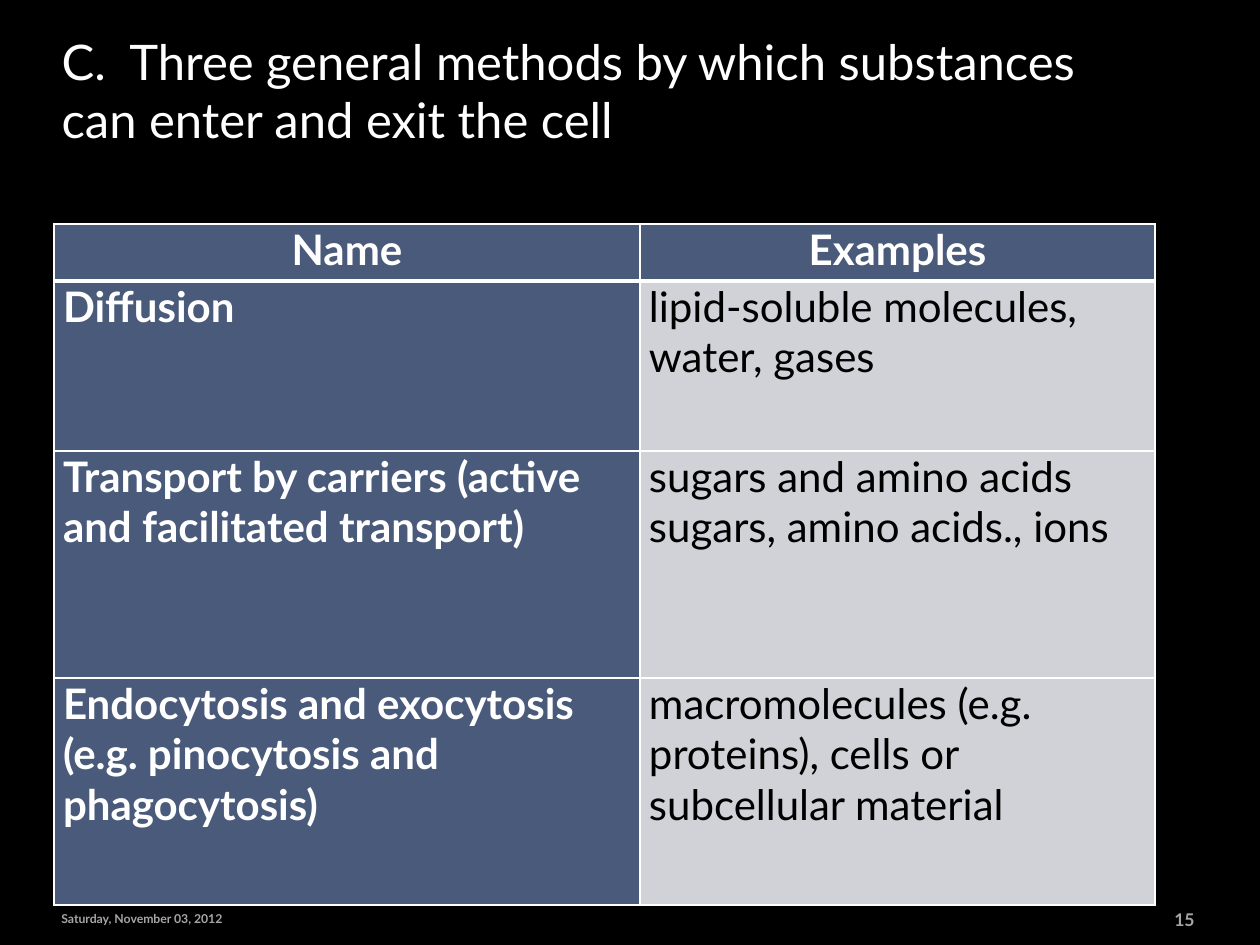
from pptx import Presentation
from pptx.dml.color import RGBColor
from pptx.enum.text import MSO_ANCHOR as Anchor, MSO_AUTO_SIZE as AutoSize, PP_ALIGN as Align
from pptx.oxml import parse_xml
from pptx.oxml.ns import nsdecls
from pptx.util import Pt

HEADING = "C.  Three general methods by which substances can enter and exit the cell"
METHODS = [
    ("Name", "Examples"),
    ("Diffusion", "lipid-soluble molecules, water, gases"),
    ("Transport by carriers (active and facilitated transport)",
     "sugars and amino acids\nsugars, amino acids., ions"),
    ("Endocytosis and exocytosis (e.g. pinocytosis and phagocytosis)",
     "macromolecules (e.g. proteins), cells or subcellular material"),
]
FOOTERS = [
    ("Saturday, November 03, 2012", (49, 902, 202, 34), 7, Align.LEFT),
    ("15", (1086, 902, 121, 34), 10, Align.RIGHT),
]
COLUMN_WIDTHS = [586, 515]
ROW_HEIGHTS = [57, 170, 227, 227]

FONT = "Lato"
BLACK = RGBColor(0x00, 0x00, 0x00)
WHITE = RGBColor(0xFF, 0xFF, 0xFF)
GRAY = RGBColor(0xA6, 0xA6, 0xA6)
NAVY = RGBColor(0x4A, 0x5A, 0x7A)
SILVER = RGBColor(0xD0, 0xD2, 0xD7)


def px(length):
    return round(length * 914400 / 126)


def style(frame, size, color, bold=False, align=Align.LEFT):
    for paragraph in frame.paragraphs:
        paragraph.alignment = align
        font = paragraph.font
        font.name, font.size, font.bold = FONT, Pt(size), bold
        font.color.rgb = color


def add_borders(cell, row):
    widths = {"L": 1, "R": 1, "T": 3 if row == 1 else 1, "B": 3 if row == 0 else 1}
    properties = cell._tc.get_or_add_tcPr()
    for position, (side, width) in enumerate(widths.items()):
        properties.insert(position, parse_xml(
            f'<a:ln{side} {nsdecls("a")} w="{Pt(width)}"><a:solidFill>'
            f'<a:srgbClr val="{WHITE}"/></a:solidFill></a:ln{side}>'))


def add_heading(slide):
    title = slide.shapes.title
    title.left, title.top, title.width, title.height = map(px, (49, 31, 1058, 147))
    frame = title.text_frame
    frame.text = HEADING
    frame.word_wrap = True
    frame.auto_size = AutoSize.NONE
    frame.vertical_anchor = Anchor.TOP
    frame.margin_top = frame.margin_bottom = 0
    style(frame, 28, WHITE)


def add_methods(slide):
    table = slide.shapes.add_table(
        len(ROW_HEIGHTS), len(COLUMN_WIDTHS), px(54), px(224),
        px(sum(COLUMN_WIDTHS)), px(sum(ROW_HEIGHTS))).table
    for column, width in zip(table.columns, COLUMN_WIDTHS):
        column.width = px(width)
    for row, (method, height) in enumerate(zip(METHODS, ROW_HEIGHTS)):
        table.rows[row].height = px(height)
        for column, wording in enumerate(method):
            cell = table.cell(row, column)
            cell.text = wording
            cell.margin_left = cell.margin_right = px(9)
            cell.margin_top = cell.margin_bottom = 0
            labelled = row == 0 or column == 0
            cell.fill.solid()
            cell.fill.fore_color.rgb = NAVY if labelled else SILVER
            style(cell.text_frame, 24, WHITE if labelled else BLACK, labelled,
                  Align.CENTER if row == 0 else Align.LEFT)
            add_borders(cell, row)


def add_footers(slide):
    for wording, place, size, align in FOOTERS:
        frame = slide.shapes.add_textbox(*map(px, place)).text_frame
        frame.text = wording
        frame.word_wrap = True
        frame.vertical_anchor = Anchor.MIDDLE
        style(frame, size, GRAY, True, align)


def main():
    deck = Presentation()
    deck.slide_width, deck.slide_height = px(1260), px(945)
    slide = deck.slides.add_slide(deck.slide_layouts[5])
    slide.background.fill.solid()
    slide.background.fill.fore_color.rgb = BLACK
    add_methods(slide)
    add_footers(slide)
    add_heading(slide)
    deck.save("out.pptx")


if __name__ == "__main__":
    main()
